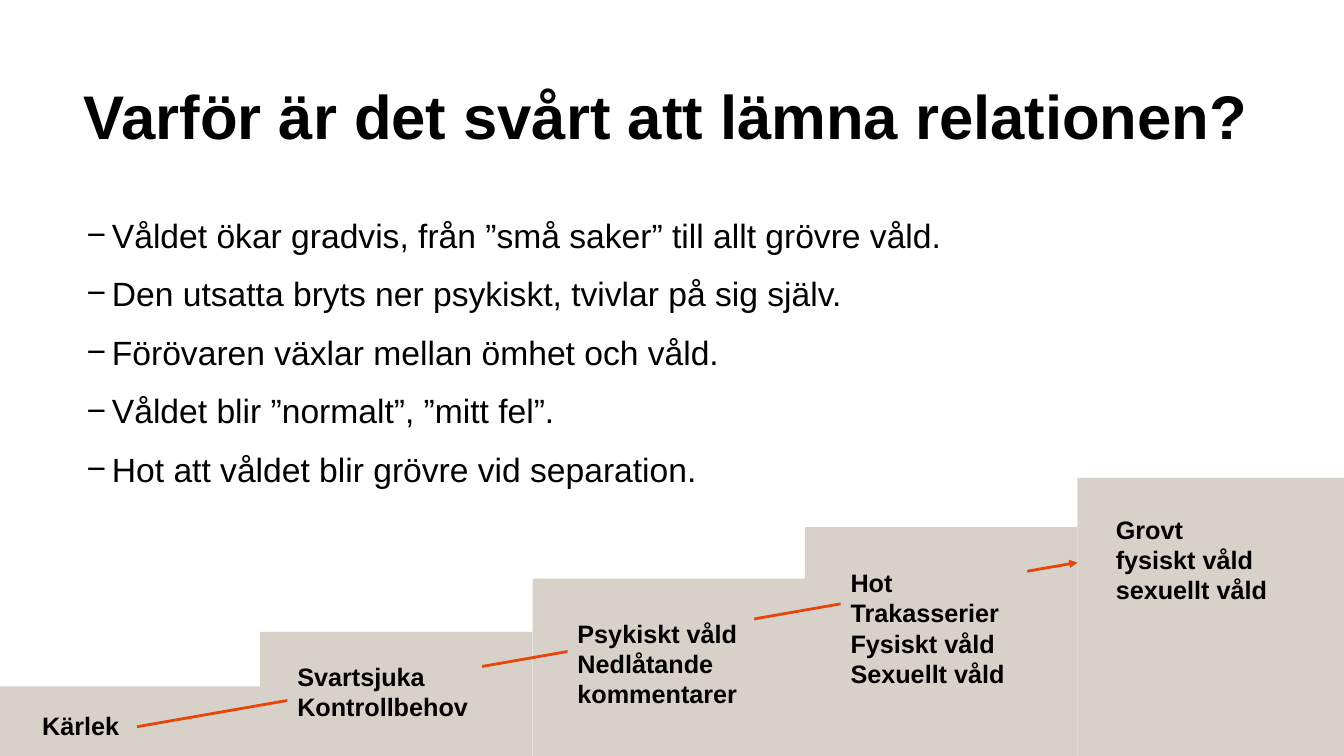
from lxml import etree
from pptx import Presentation
from pptx.dml.color import RGBColor
from pptx.enum.shapes import MSO_CONNECTOR, MSO_SHAPE
from pptx.enum.text import MSO_ANCHOR, MSO_AUTO_SIZE, PP_ALIGN
from pptx.oxml.ns import qn
from pptx.util import Inches, Pt

RECTANGLE = MSO_SHAPE.RECTANGLE
STRAIGHT = MSO_CONNECTOR.STRAIGHT
TOP = MSO_ANCHOR.TOP
LEFT = PP_ALIGN.LEFT
NO_FIT = MSO_AUTO_SIZE.NONE
GROW = MSO_AUTO_SIZE.SHAPE_TO_FIT_TEXT

STEP_ORIGIN, STEP_WIDTH, STEP_BOTTOM = -0.92, 20.27, 100.4
STEP_TOPS = (90.8, 83.6, 76.53, 69.73, 63.2)
LABEL_LINE, LABEL_PADDING = 4, 1.33

BULLETS = (
    "Våldet ökar gradvis, från ”små saker” till allt grövre våld.",
    "Den utsatta bryts ner psykiskt, tvivlar på sig själv.",
    "Förövaren växlar mellan ömhet och våld.",
    "Våldet blir ”normalt”, ”mitt fel”.",
    "Hot att våldet blir grövre vid separation.",
)
LABELS = (
    (2.4, 93.33, 7.73, 1, ("Kärlek",)),
    (21.38, 86.8, 14.48, 2, ("Svartsjuka", "Kontrollbehov")),
    (42.23, 81.07, 13.88, 3, ("Psykiskt våld", "Nedlåtande kommentarer")),
    (62.55, 74.4, 13.88, 4, ("Hot", "Trakasserier Fysiskt våld", "Sexuellt våld")),
    (82.28, 67.33, 13.2, 3, ("Grovt", "fysiskt våld", "sexuellt våld")),
)


def color(hex_string):
    """Turn a hex string into a colour."""
    return RGBColor.from_string(hex_string)


class SlideBuilder:
    """Draws styled elements placed in percent of the slide's size."""

    font = "Arial"
    ink = "000000"
    stair = "D7D1CA"
    accent = "E6460A"

    def __init__(self, deck):
        self.deck = deck
        self.page = deck.slides.add_slide(deck.slide_layouts[1])

    def across(self, percent):
        return round(self.deck.slide_width * percent / 100)

    def down(self, percent):
        return round(self.deck.slide_height * percent / 100)

    def area(self, left, top, width, height):
        return self.across(left), self.down(top), self.across(width), self.down(height)

    def add_span(self, para, text, size, bold):
        para.alignment = LEFT
        span = para.add_run()
        span.text = text
        span.font.name = self.font
        span.font.size = Pt(size)
        span.font.bold = bold
        span.font.color.rgb = color(self.ink)

    def paragraphs(self, frame, texts):
        for index, text in enumerate(texts):
            yield (frame.add_paragraph() if index else frame.paragraphs[0]), text

    def place(self, box, area):
        box.left, box.top, box.width, box.height = self.area(*area)
        frame = box.text_frame
        frame.word_wrap = True
        frame.auto_size = NO_FIT
        frame.vertical_anchor = TOP
        return frame

    def title(self, text, *area):
        para = self.place(self.page.shapes.title, area).paragraphs[0]
        para.line_spacing = 0.8
        self.add_span(para, text, 44, True)

    def bullets(self, texts, *area):
        frame = self.place(self.page.placeholders[1], area)
        for para, text in self.paragraphs(frame, texts):
            properties = para._p.get_or_add_pPr()
            properties.set("marL", str(Inches(0.28)))
            properties.set("indent", str(Inches(-0.25)))
            etree.SubElement(properties, qn("a:buChar"), char="−")
            para.space_before = Pt(0)
            para.space_after = Pt(13)
            self.add_span(para, text, 24, False)

    def block(self, *area):
        box = self.page.shapes.add_shape(RECTANGLE, *self.area(*area))
        box.shadow.inherit = False
        box.fill.solid()
        box.fill.fore_color.rgb = color(self.stair)
        box.line.fill.background()
        return box

    def label(self, left, top, width, lines, texts):
        height = LABEL_PADDING + LABEL_LINE * lines
        frame = self.block(left, top, width, height).text_frame
        frame.word_wrap = True
        frame.auto_size = GROW
        frame.vertical_anchor = TOP
        for para, text in self.paragraphs(frame, texts):
            self.add_span(para, text, 18, True)

    def arrow(self, *ends):
        arrow = self.page.shapes.add_connector(STRAIGHT, *self.area(*ends))
        arrow.line.color.rgb = color(self.accent)
        arrow.line.width = Pt(2)
        etree.SubElement(arrow.line._get_or_add_ln(), qn("a:tailEnd"), type="triangle")
        etree.SubElement(arrow._element.spPr, qn("a:effectLst"))


def main():
    deck = Presentation()
    deck.slide_width, deck.slide_height = Inches(13.33), Inches(7.5)
    builder = SlideBuilder(deck)
    builder.title("Varför är det svårt att lämna relationen?", 5.48, 11.47, 89.03, 16.27)
    builder.bullets(BULLETS, 5.48, 27.73, 78.83, 38.27)
    for index, top in enumerate(STEP_TOPS):
        left = STEP_ORIGIN + STEP_WIDTH * index
        builder.block(left, top, STEP_WIDTH, STEP_BOTTOM - top)
    builder.arrow(10.2, 96.13, 80.18, 74.4)
    for label in LABELS:
        builder.label(*label)
    deck.save("out.pptx")


if __name__ == "__main__":
    main()
